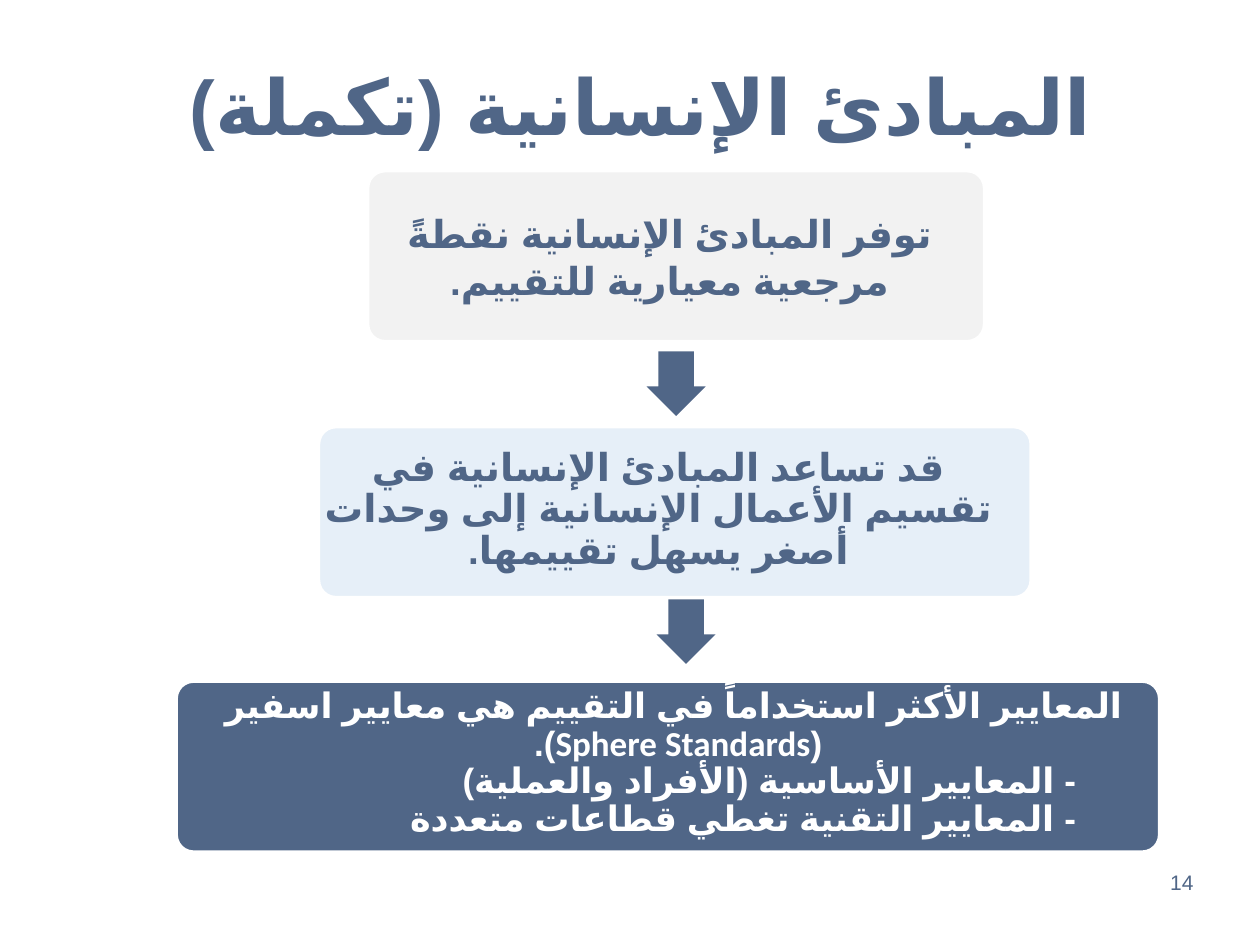
from dataclasses import dataclass

from lxml import etree
from pptx import Presentation
from pptx.dml import color
from pptx.enum import lang, shapes, text
from pptx.oxml import ns
from pptx.util import Cm, Pt


@dataclass(frozen=True)
class Theme:
    navy: str = "506687"
    grey: str = "F2F2F2"
    pale: str = "E6EFF8"
    white: str = "FFFFFF"
    head: int = 44
    main: int = 22
    small: int = 20
    page: int = 12
    font: str = "Calibri"
    plain: str = "Arial"


theme = Theme()
MID, RIGHT = text.PP_ALIGN.CENTER, text.PP_ALIGN.RIGHT


def write(frame, lines, size, ink, gap=None, inset=(0.15, 0.15), font=theme.font, bold=True):
    frame.word_wrap = True
    frame.auto_size = text.MSO_AUTO_SIZE.NONE
    frame.vertical_anchor = text.MSO_ANCHOR.MIDDLE
    frame.margin_left = frame.margin_right = Cm(inset[0])
    frame.margin_top = frame.margin_bottom = Cm(inset[1])
    for i, (words, align, indent) in enumerate(lines):
        para = frame.paragraphs[0] if i == 0 else frame.add_paragraph()
        para.alignment = align
        para.line_spacing = gap
        para.space_before = Pt(0)
        props = para._p.get_or_add_pPr()
        props.set("rtl", "1")
        props.set("marL", str(Cm(indent)))
        props.set("indent", "0")
        run = para.add_run()
        run.text = words
        run.font.size = Pt(size)
        run.font.bold = bold
        run.font.language_id = lang.MSO_LANGUAGE_ID.ARABIC
        run.font.color.rgb = color.RGBColor.from_string(ink)
        run.font.name = font
        etree.SubElement(run.font._element, ns.qn("a:cs"), typeface=theme.plain)


def draw(kind, box, fill, edge=None):
    shape = slide.shapes.add_shape(kind, *map(Cm, box))
    shape.shadow.inherit = False
    shape.fill.solid()
    shape.fill.fore_color.rgb = color.RGBColor.from_string(fill)
    if edge:
        shape.line.color.rgb = color.RGBColor.from_string(edge)
        shape.line.width = Pt(1.5)
    else:
        shape.line.fill.background()
    return shape


deck = Presentation()
deck.slide_width, deck.slide_height = Cm(25.4), Cm(19.05)
slide = deck.slides.add_slide(deck.slide_layouts[5])

title = slide.shapes.title
title.left, title.top, title.width, title.height = map(Cm, (1.27, 1.27, 22.86, 1.91))
write(title.text_frame, [("المبادئ الإنسانية (تكملة) ", MID, 0)],
      theme.head, theme.navy, 0.89, (0.18, 0.1))

steps = [
    ((7.42, 3.45, 12.42, 3.43), (7.57, 3.56, 11.86, 3.23),
     theme.grey, theme.navy, theme.main, None,
     [("توفر المبادئ الإنسانية نقطةً مرجعية معيارية للتقييم.", MID, 0)]),
    ((6.43, 8.61, 14.35, 3.43), (6.1, 8.53, 14.35, 3.51),
     theme.pale, theme.navy, theme.main, 0.9,
     [("قد تساعد المبادئ الإنسانية في تقسيم الأعمال الإنسانية إلى وحدات أصغر يسهل تقييمها.", MID, 0)]),
    ((3.56, 13.74, 19.81, 3.43), (3.81, 13.59, 19.53, 3.61),
     theme.navy, theme.white, theme.small, 0.9,
     [("المعايير الأكثر استخداماً في التقييم هي معايير اسفير (Sphere Standards). ", MID, 0),
      ("- المعايير الأساسية (الأفراد والعملية)", RIGHT, 1.5),
      ("- المعايير التقنية تغطي قطاعات متعددة ", RIGHT, 1.5)]),
]
for panel, area, fill, ink, size, gap, lines in steps:
    card = draw(shapes.MSO_SHAPE.ROUNDED_RECTANGLE, panel, fill, theme.white)
    card.adjustments[0] = 0.1
    label = slide.shapes.add_textbox(*map(Cm, area))
    write(label.text_frame, lines, size, ink, gap)

for left, top in ((12.98, 7.14), (13.18, 12.14)):
    arrow = draw(shapes.MSO_SHAPE.RIGHT_ARROW, (left, top, 1.3, 1.19), theme.navy)
    arrow.rotation = 90
    arrow.adjustments[0] = 0.6
    arrow.adjustments[1] = 0.5

page = slide.shapes.add_textbox(*map(Cm, (20.98, 17.22, 3.33, 1.12)))
write(page.text_frame, [("14", RIGHT, 0)], theme.page, theme.navy,
      inset=(0.25, 0.13), font=theme.plain, bold=False)

deck.save("out.pptx")
